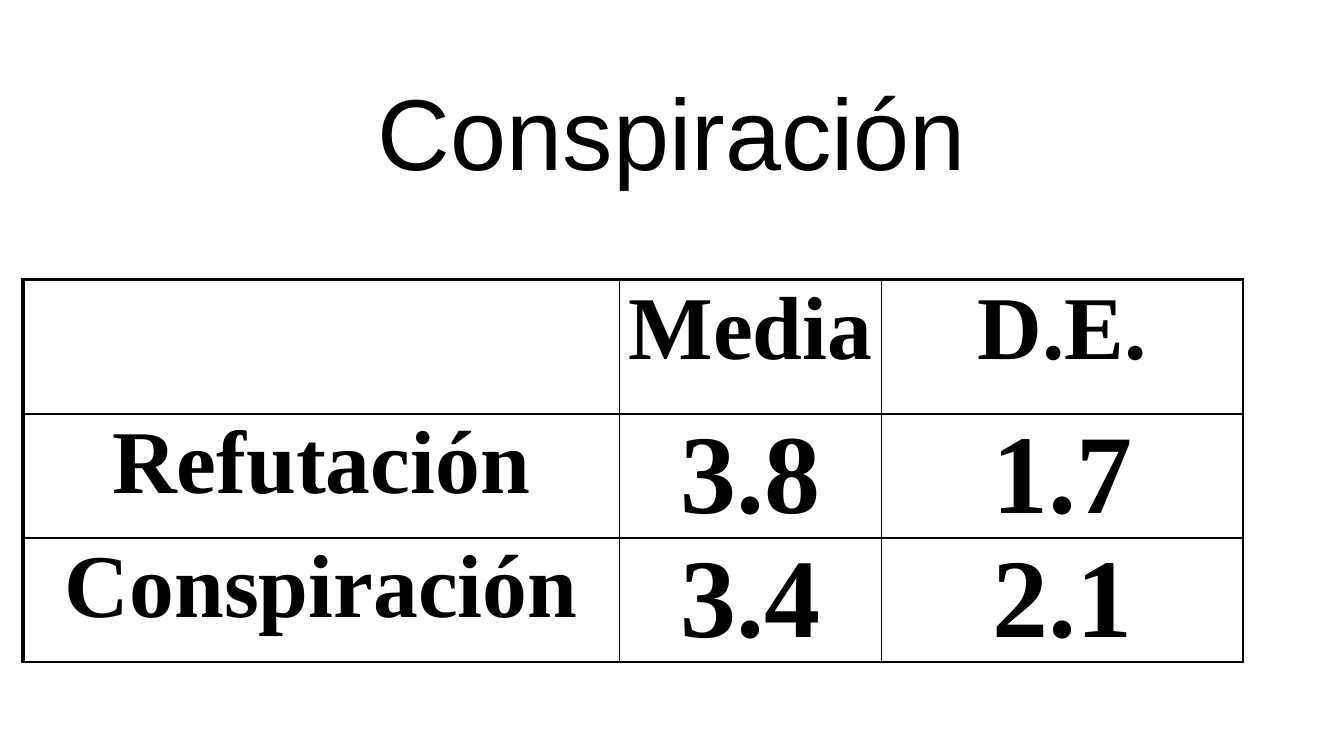
from lxml.etree import SubElement
from pptx import Presentation
from pptx.dml.color import RGBColor
from pptx.enum.text import MSO_ANCHOR, PP_ALIGN
from pptx.oxml.ns import qn
from pptx.util import Inches, Pt

BLACK = "000000"
COLUMN_WIDTHS = [4.44, 1.95, 2.69]
ROW_HEIGHTS = [1, 0.92, 0.92]
ROWS = [
    ["", "Media", "D.E."],
    ["Refutación", "3.8", "1.7"],
    ["Conspiración", "3.4", "2.1"],
]


def color(value):
    return RGBColor.from_string(value)


def write(frame, text, *, size, font, bold=False, align=PP_ALIGN.CENTER):
    para = frame.paragraphs[0]
    para.alignment = align
    span = para.add_run()
    span.text = text
    span.font.size = Pt(size)
    span.font.name = font
    span.font.bold = bold
    span.font.color.rgb = color(BLACK)


def set_borders(cell, **widths):
    """Draw the sides L, R, T and B, in the order the schema needs."""
    properties = cell._tc.get_or_add_tcPr()
    for side in "LRTB":
        line = SubElement(properties, qn(f"a:ln{side}"), w=str(Pt(widths[side])))
        fill = SubElement(line, qn("a:solidFill"))
        SubElement(fill, qn("a:srgbClr"), val=BLACK)


def add_title(page, text, left, top, width, height):
    title = page.shapes.title
    title.left, title.top = Inches(left), Inches(top)
    title.width, title.height = Inches(width), Inches(height)
    frame = title.text_frame
    frame.word_wrap = True
    frame.vertical_anchor = MSO_ANCHOR.MIDDLE
    frame.margin_left = frame.margin_right = Inches(0.1)
    frame.margin_top = frame.margin_bottom = Inches(0.1)
    write(frame, text, size=54, font="Arial")


def add_statistics(page, left, top):
    table = page.shapes.add_table(
        len(ROWS), len(COLUMN_WIDTHS), Inches(left), Inches(top),
        Inches(sum(COLUMN_WIDTHS)), Inches(sum(ROW_HEIGHTS))).table
    table.first_row = table.horz_banding = False
    for column, width in zip(table.columns, COLUMN_WIDTHS):
        column.width = Inches(width)
    for row, height in zip(table.rows, ROW_HEIGHTS):
        row.height = Inches(height)

    for r, texts in enumerate(ROWS):
        for c, text in enumerate(texts):
            cell = table.cell(r, c)
            cell.margin_left = cell.margin_right = 0
            cell.margin_top = cell.margin_bottom = 0
            set_borders(cell, L=1 if c else 2.25, R=1, T=1 if r else 2.25, B=1)
            cell.fill.background()
            if text:
                write(cell.text_frame, text, size=60 if r and c else 48,
                      font="Times New Roman", bold=True)


def main():
    deck = Presentation()
    deck.slide_width = Inches(10)
    deck.slide_height = deck.slide_width * 9 // 16
    page = deck.slides.add_slide(deck.slide_layouts[5])
    page.background.fill.solid()
    page.background.fill.fore_color.rgb = color("FFFFFF")
    add_title(page, "Conspiración", 0.75, 0.5, 8.5, 0.94)
    add_statistics(page, 0.17, 2.08)
    deck.save("out.pptx")


if __name__ == "__main__":
    main()
